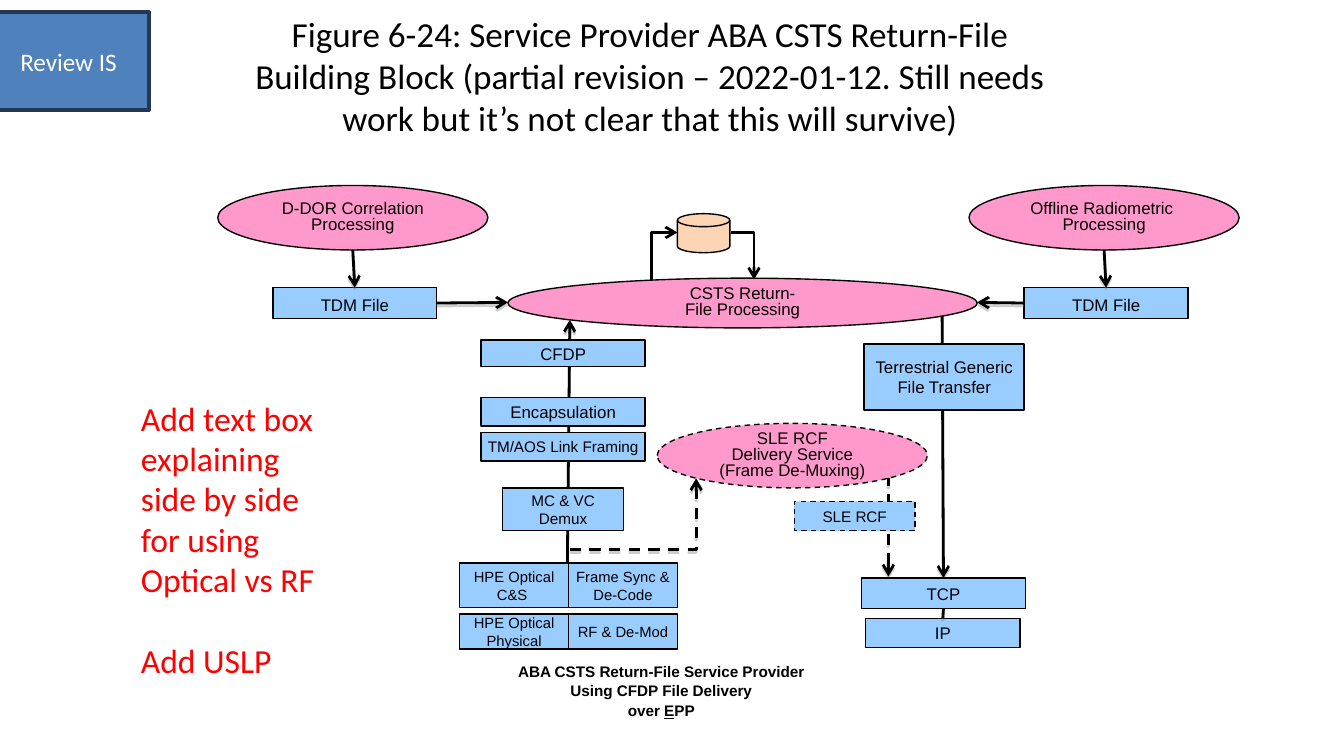
from lxml import etree
from pptx import Presentation
from pptx.dml.color import RGBColor
from pptx.enum.dml import MSO_LINE
from pptx.enum.shapes import MSO_CONNECTOR, MSO_SHAPE
from pptx.enum.text import MSO_ANCHOR, PP_ALIGN
from pptx.oxml.ns import qn
from pptx.util import Inches, Pt

RECT, OVAL, DISK = MSO_SHAPE.RECTANGLE, MSO_SHAPE.OVAL, MSO_SHAPE.FLOWCHART_MAGNETIC_DISK
STRAIGHT, ELBOW = MSO_CONNECTOR.STRAIGHT, MSO_CONNECTOR.ELBOW
LEFT, CENTER = PP_ALIGN.LEFT, PP_ALIGN.CENTER
TOP, MIDDLE = MSO_ANCHOR.TOP, MSO_ANCHOR.MIDDLE
DASH = MSO_LINE.DASH

BLACK = RGBColor(0x00, 0x00, 0x00)
WHITE = RGBColor(0xFF, 0xFF, 0xFF)
RED = RGBColor(0xFF, 0x00, 0x00)
BLUE = RGBColor(0x99, 0xCC, 0xFF)
PINK = RGBColor(0xFF, 0x99, 0xCC)
PEACH = RGBColor(0xFC, 0xD5, 0xB5)
TAG_FILL = RGBColor(0x4F, 0x81, 0xBD)
TAG_LINE = RGBColor(0x23, 0x39, 0x53)

SITE_TOP, SITE_LEFT, SITE_BOTTOM, SITE_RIGHT = range(4)


def write(sp, lines, size, font="Arial", color=BLACK, align=CENTER, anchor=MIDDLE,
          insets=(0.1, 0.05, 0.1, 0.05), spacing=None, bold=None, wrap=True):
    """Put one paragraph per line into a shape or text box."""
    tf = sp.text_frame
    tf.word_wrap = wrap
    tf.vertical_anchor = anchor
    tf.margin_left, tf.margin_top, tf.margin_right, tf.margin_bottom = map(Inches, insets)
    tf.text = "\n".join(lines)
    for p in tf.paragraphs:
        p.alignment = align
        p.line_spacing = spacing
        p.font.size, p.font.name, p.font.bold = Pt(size), font, bold
        p.font.color.rgb = color
    return tf


def text_box(s, x, y, w, h, lines, size, **style):
    return write(s.shapes.add_textbox(*map(Inches, (x, y, w, h))), lines, size, **style)


def node(s, kind, x, y, w, h, fill, line=BLACK, width=0.75, dash=None):
    sp = s.shapes.add_shape(kind, *map(Inches, (x, y, w, h)))
    sp.shadow.inherit = False
    sp.fill.solid()
    sp.fill.fore_color.rgb = fill
    sp.line.color.rgb, sp.line.width = line, Pt(width)
    sp.line.dash_style = dash
    return sp


def block(s, x, y, w, h, label, size=9, dash=None, bottom=0.03):
    sp = node(s, RECT, x, y, w, h, BLUE, dash=dash)
    write(sp, [label], size, insets=(0.03, 0.03, 0.03, bottom))
    return sp


def process(s, x, y, w, h, lines, dash=None):
    sp = node(s, OVAL, x, y, w, h, PINK, dash=dash)
    write(sp, lines, 9, insets=(0, 0, 0, 0), spacing=0.8)
    return sp


def link(s, x1, y1, x2, y2, kind=STRAIGHT, arrow="tailEnd", dash=None, shadow=True):
    """Line with an optional open arrowhead: headEnd at its start, tailEnd at its end."""
    c = s.shapes.add_connector(kind, *map(Inches, (x1, y1, x2, y2)))
    c.line.color.rgb, c.line.width = BLACK, Pt(1.5)
    c.line.dash_style = dash
    pr = c._element.spPr
    if kind == ELBOW:  # a single bend: across, then up or down
        pr.find(qn("a:prstGeom")).set("prst", "bentConnector2")
    if arrow:
        etree.SubElement(pr.find(qn("a:ln")), qn("a:" + arrow), type="arrow")
    effects = etree.SubElement(pr, qn("a:effectLst"))
    if shadow:
        outer = etree.SubElement(effects, qn("a:outerShdw"), dist=str(Pt(1.6)),
                                 dir="5400000", rotWithShape="0")
        grey = etree.SubElement(outer, qn("a:srgbClr"), val="808080")
        etree.SubElement(grey, qn("a:alpha"), val="38000")
    return c


def review_tag(s, x, y, w, h):
    sp = node(s, RECT, x, y, w, h, TAG_FILL, TAG_LINE, 2)
    write(sp, ["Review IS"], 13.5, "Calibri", WHITE)


def hub(s, x, y, w, h):
    """Central process with its file store above."""
    disk_x, disk_y, disk_w, disk_h = x + 1.26, y - 0.48, 0.39, 0.29
    mid = disk_y + 0.14
    node(s, DISK, disk_x, disk_y, disk_w, disk_h, PEACH)
    link(s, disk_x + disk_w + 0.01, mid, x + 1.83, y + 0.01, ELBOW, shadow=False)
    link(s, disk_x, mid, x + 1.07, y + 0.05, ELBOW, "headEnd", shadow=False)
    process(s, x, y, w, h, ["CSTS Return-", "File Processing"])


def source(s, x, y, w, h, label, side, hub_x):
    """Producing process, its TDM file and the arrow into the hub."""
    oval_h, file_w, file_h = 0.48, 1.22, 0.23
    process(s, x, y, w, oval_h, [label, "Processing"])
    tdm = block(s, x + 0.41, y + h - file_h, file_w, file_h, "TDM File", bottom=0)
    down = link(s, x + w / 2, y + oval_h, x + w / 2, y + h - file_h)
    down.end_connect(tdm, SITE_TOP)
    across = link(s, x, y + h, hub_x, 2.25)
    across.begin_connect(tdm, side)


def space_link_stack(s, x, y, w, h):
    """Protocol layers below the hub, joined by one upward line."""
    mid = x + w / 2
    link(s, mid + 0.01, y, mid - 0.01, y + 1.99, arrow="headEnd")
    layers = [(0.15, 1.22, 0.2, "CFDP", 9), (0.58, 1.22, 0.21, "Encapsulation", 9),
              (0.84, 1.22, 0.21, "TM/AOS Link Framing", 8.2),
              (1.25, 0.9, 0.32, "MC & VC Demux", 8.2)]
    for dy, bw, bh, label, size in layers:
        block(s, mid - bw / 2 - 0.04, y + dy, bw, bh, label, size)
    pairs = [(0.33, "HPE Optical C&S ", "Frame Sync & De-Code"),
             (0.26, "HPE Optical Physical", "RF & De-Mod")]
    for row, (bh, *labels) in enumerate(pairs):
        for col, label in enumerate(labels):
            block(s, x + col * w / 2, y + 1.81 + row * 0.38, w / 2, bh, label, 7.9)


def terrestrial_stack(s, x, y, w, h):
    """File transfer from the hub down to TCP and IP."""
    mid = x + w / 2
    down = link(s, mid - 0.01, y, mid, y + 1.95)
    block(s, x + 0.02, y + 0.21, 1.19, 0.49, "Terrestrial Generic File Transfer")
    tcp = block(s, x, y + 1.95, w, 0.23, "TCP")
    ip = block(s, x + 0.03, y + 2.25, 1.15, 0.22, "IP")
    down.end_connect(tcp, SITE_TOP)
    joint = link(s, mid, y + 2.17, mid, y + 2.25, arrow=None)
    joint.begin_connect(tcp, SITE_BOTTOM)
    joint.end_connect(ip, SITE_TOP)


def sle_branch(s, x, y, w, h):
    """Dashed frame delivery service between the two stacks."""
    process(s, x, y, w, 0.48, ["SLE RCF", "Delivery Service", "(Frame De-Muxing)"], DASH)
    link(s, x + 1.72, y + h, x + 1.72, y + 0.41, arrow="headEnd", dash=DASH)
    block(s, x + 1.02, y + 0.58, 0.9, 0.22, "SLE RCF", 8.2, DASH)
    link(s, x - 0.65, y + 0.94, x + 0.29, y + 0.41, ELBOW, dash=DASH)


def caption(s, x, y, w, h):
    tf = text_box(s, x, y, w, h, ["ABA CSTS Return-File Service Provider",
                                  "Using CFDP File Delivery\vover "],
                  8.2, spacing=Pt(10.5), bold=True, wrap=False)
    p = tf.paragraphs[-1]
    for letters, underline in (("E", True), ("PP", False)):
        r = p.add_run()
        r.text, r.font.underline = letters, underline


def note(s, x, y, w, h):
    tf = text_box(s, x, y, w, h,
                  ["Add text box explaining side by side for using Optical vs RF", "Add USLP"],
                  18, font="Calibri", color=RED, align=LEFT, anchor=TOP)
    tf.paragraphs[1].space_before = Pt(21.6)


def main():
    prs = Presentation()
    prs.slide_width = Inches(10)
    prs.slide_height = prs.slide_width * 9 // 16
    s = prs.slides.add_slide(prs.slide_layouts[6])

    text_box(s, 1.81, 0.25, 6.06, 0.62,
             ["Figure 6-24: Service Provider ABA CSTS Return-File Building Block "
              "(partial revision – 2022-01-12. Still needs work but it’s not clear "
              "that this will survive)"],
             18.8, font="Calibri", insets=(0.07, 0.04, 0.07, 0.04))
    review_tag(s, -0.09, 0.09, 1.2, 0.73)
    space_link_stack(s, 3.42, 2.38, 1.62, 2.45)
    hub(s, 3.78, 2.07, 3.49, 0.37)
    source(s, 1.62, 1.38, 2.01, 0.99, "D-DOR Correlation", SITE_RIGHT, 3.78)
    source(s, 7.21, 1.38, 2.01, 0.99, "Offline Radiometric ", SITE_LEFT, 7.27)
    sle_branch(s, 4.89, 3.15, 2.01, 1.14)
    terrestrial_stack(s, 6.41, 2.35, 1.22, 2.47)
    caption(s, 3.73, 4.86, 2.38, 0.55)
    note(s, 0.95, 2.91, 1.69, 2.22)
    prs.save("out.pptx")


if __name__ == "__main__":
    main()
